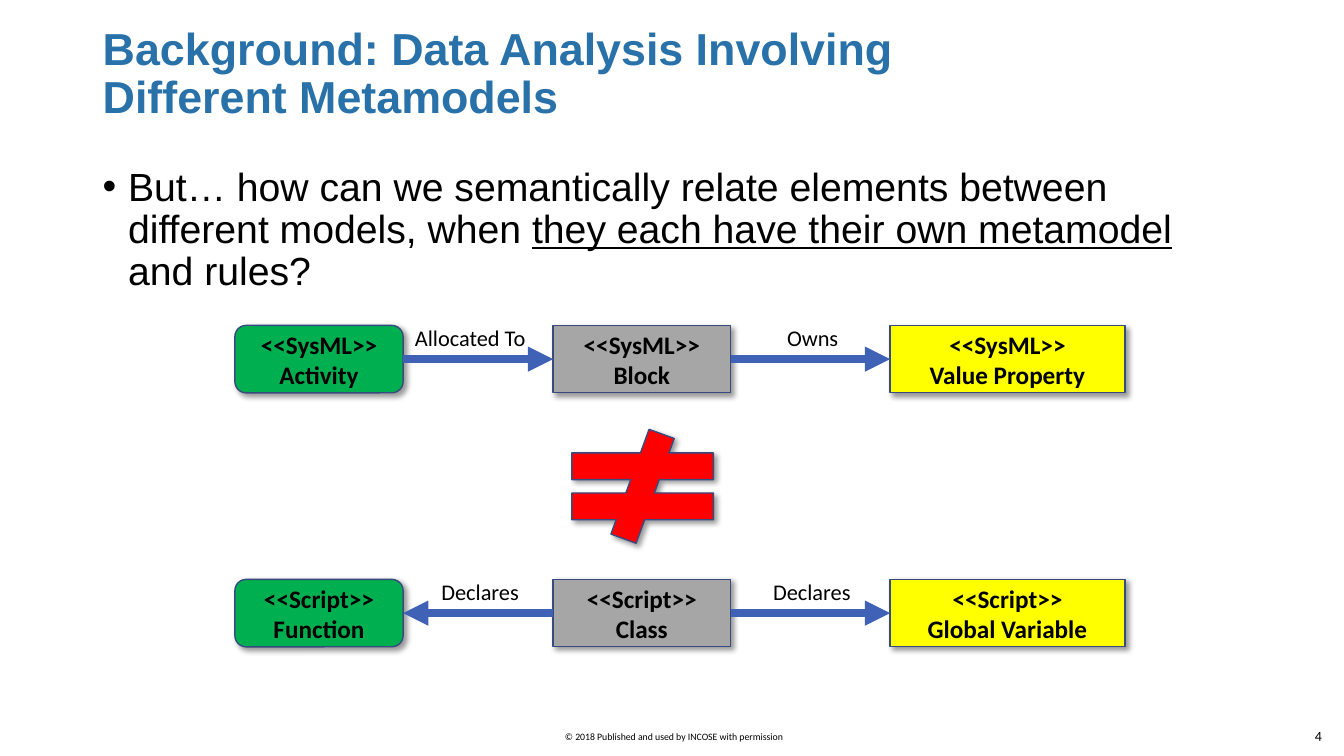
from dataclasses import dataclass

from lxml import etree
from pptx import Presentation
from pptx import util as u
from pptx.dml.color import RGBColor
from pptx.enum import shapes, text
from pptx.oxml.ns import qn

Preset = shapes.MSO_SHAPE
Align = text.PP_ALIGN
Anchor = text.MSO_ANCHOR


@dataclass(frozen=True)
class Theme:
    title: str = "2971A9"
    ink: str = "000000"
    outline: str = "374B7F"
    arrow: str = "4062B6"
    unequal: str = "FF0000"
    heading_font: str = "Arial"
    label_font: str = "Calibri"
    title_size: int = 32
    body_size: int = 28
    node_size: int = 18
    label_size: int = 16
    number_size: int = 10
    footer_size: int = 7


@dataclass(frozen=True)
class Box:
    left: float
    top: float
    width: float
    height: float

    def lengths(self) -> list:
        return [u.Cm(value) for value in (self.left, self.top, self.width, self.height)]


@dataclass(frozen=True)
class Column:
    left: float
    width: float
    preset: int
    fill: str


@dataclass(frozen=True)
class Relation:
    label: str
    label_center: float
    start: int
    end: int


@dataclass(frozen=True)
class Metamodel:
    top: float
    stereotype: str
    names: tuple
    relations: tuple


THEME = Theme()
NODE_HEIGHT = 1.7
LABEL_WIDTH, LABEL_HEIGHT, LABEL_RISE = 3.4, 0.94, 0.16

COLUMNS = (
    Column(5.92, 4.24, Preset.ROUNDED_RECTANGLE, "00B050"),
    Column(13.94, 4.47, Preset.RECTANGLE, "A6A6A6"),
    Column(22.43, 5.92, Preset.RECTANGLE, "FFFF00"),
)
METAMODELS = (
    Metamodel(8.2, "<<SysML>>", ("Activity", "Block", "Value Property"),
              (Relation("Allocated To", 11.85, 0, 1), Relation("Owns", 20.48, 1, 2))),
    Metamodel(14.6, "<<Script>>", ("Function", "Class", "Global Variable"),
              (Relation("Declares", 12.1, 1, 0), Relation("Declares", 20.46, 1, 2))),
)


def add_run(paragraph, words: str, size: int, font: str, color: str = THEME.ink,
            bold: bool = False, underline: bool = False) -> None:
    run = paragraph.add_run()
    run.text = words
    run.font.size = u.Pt(size)
    run.font.name = font
    run.font.bold = bold
    run.font.underline = underline
    run.font.color.rgb = RGBColor.from_string(color)


def add_text_box(slide, box: Box, anchor=Anchor.TOP, align=Align.LEFT):
    """Add an empty wrapping text box and return its first paragraph."""
    frame = slide.shapes.add_textbox(*box.lengths()).text_frame
    frame.word_wrap = True
    frame.vertical_anchor = anchor
    paragraph = frame.paragraphs[0]
    paragraph.alignment = align
    return paragraph


def add_shadowed_shape(slide, preset: int, box: Box, fill: str):
    shape = slide.shapes.add_shape(preset, *box.lengths())
    shape.fill.solid()
    shape.fill.fore_color.rgb = RGBColor.from_string(fill)
    shape.line.color.rgb = RGBColor.from_string(THEME.outline)
    shape.line.width = u.Pt(1)
    # Soft shadow towards the lower right
    shape.shadow.inherit = False
    effects = shape._element.spPr.find(qn("a:effectLst"))
    shadow = etree.SubElement(effects, qn("a:outerShdw"), blurRad=str(u.Pt(4)),
                              dist=str(u.Pt(3)), dir="2700000", algn="tl", rotWithShape="0")
    color = etree.SubElement(shadow, qn("a:srgbClr"), val=THEME.ink)
    etree.SubElement(color, qn("a:alpha"), val="40000")
    return shape


def add_node(slide, column: Column, top: float, lines: tuple):
    box = Box(column.left, top, column.width, NODE_HEIGHT)
    shape = add_shadowed_shape(slide, column.preset, box, column.fill)
    frame = shape.text_frame
    frame.vertical_anchor = Anchor.MIDDLE
    for index, line in enumerate(lines):
        paragraph = frame.add_paragraph() if index else frame.paragraphs[0]
        paragraph.alignment = Align.CENTER
        add_run(paragraph, line, THEME.node_size, THEME.label_font, bold=True)
    return shape


def add_arrow(slide, source, target) -> None:
    connector = slide.shapes.add_connector(shapes.MSO_CONNECTOR.STRAIGHT, 0, 0, 0, 0)
    rightward = source.left < target.left
    connector.begin_connect(source, 3 if rightward else 1)
    connector.end_connect(target, 1 if rightward else 3)
    connector.line.color.rgb = RGBColor.from_string(THEME.arrow)
    connector.line.width = u.Pt(6)
    etree.SubElement(connector.line._get_or_add_ln(), qn("a:tailEnd"), type="triangle")
    etree.SubElement(connector._element.spPr, qn("a:effectLst"))


def add_metamodel(slide, metamodel: Metamodel) -> None:
    nodes = [add_node(slide, column, metamodel.top, (metamodel.stereotype, name))
             for column, name in zip(COLUMNS, metamodel.names)]
    for relation in metamodel.relations:
        add_arrow(slide, nodes[relation.start], nodes[relation.end])
        box = Box(relation.label_center - LABEL_WIDTH / 2, metamodel.top - LABEL_RISE,
                  LABEL_WIDTH, LABEL_HEIGHT)
        label = add_text_box(slide, box, align=Align.CENTER)
        add_run(label, relation.label, THEME.label_size, THEME.label_font)


def add_question(slide) -> None:
    paragraph = add_text_box(slide, Box(2.34, 4.09, 29.21, 3.73))
    properties = paragraph._p.get_or_add_pPr()
    properties.set("marL", str(u.Cm(0.64)))
    properties.set("indent", str(-u.Cm(0.64)))
    etree.SubElement(properties, qn("a:buFont"), typeface=THEME.heading_font)
    etree.SubElement(properties, qn("a:buChar"), char="•")
    paragraph.line_spacing = 0.9
    for words, underline in (
        ("But… how can we semantically relate elements between different models, when ", False),
        ("they each have their own metamodel", True),
        (" and rules?", False),
    ):
        add_run(paragraph, words, THEME.body_size, THEME.heading_font, underline=underline)


def main() -> None:
    presentation = Presentation()
    presentation.slide_width, presentation.slide_height = u.Cm(33.87), u.Cm(19.05)
    slide = presentation.slides.add_slide(presentation.slide_layouts[6])

    # Title and question
    title = add_text_box(slide, Box(2.34, 0.43, 21.08, 2.92), Anchor.MIDDLE)
    title.line_spacing = 0.9
    add_run(title, "Background: Data Analysis Involving Different Metamodels",
            THEME.title_size, THEME.heading_font, THEME.title, bold=True)
    add_question(slide)

    # The two metamodels and the sign between them
    for metamodel in METAMODELS:
        add_metamodel(slide, metamodel)
    add_shadowed_shape(slide, Preset.MATH_NOT_EQUAL, Box(13.77, 10.82, 4.85, 2.87),
                       THEME.unequal)

    # Footer and slide number
    footer = add_text_box(slide, Box(12.22, 18.29, 9.53, 0.56), align=Align.CENTER)
    add_run(footer, "© 2018 Published and used by INCOSE with permission",
            THEME.footer_size, THEME.label_font)
    number = add_text_box(slide, Box(32.58, 18.03, 1.29, 1.02), Anchor.MIDDLE, Align.CENTER)
    add_run(number, "4", THEME.number_size, THEME.label_font)

    presentation.save("out.pptx")


if __name__ == "__main__":
    main()
